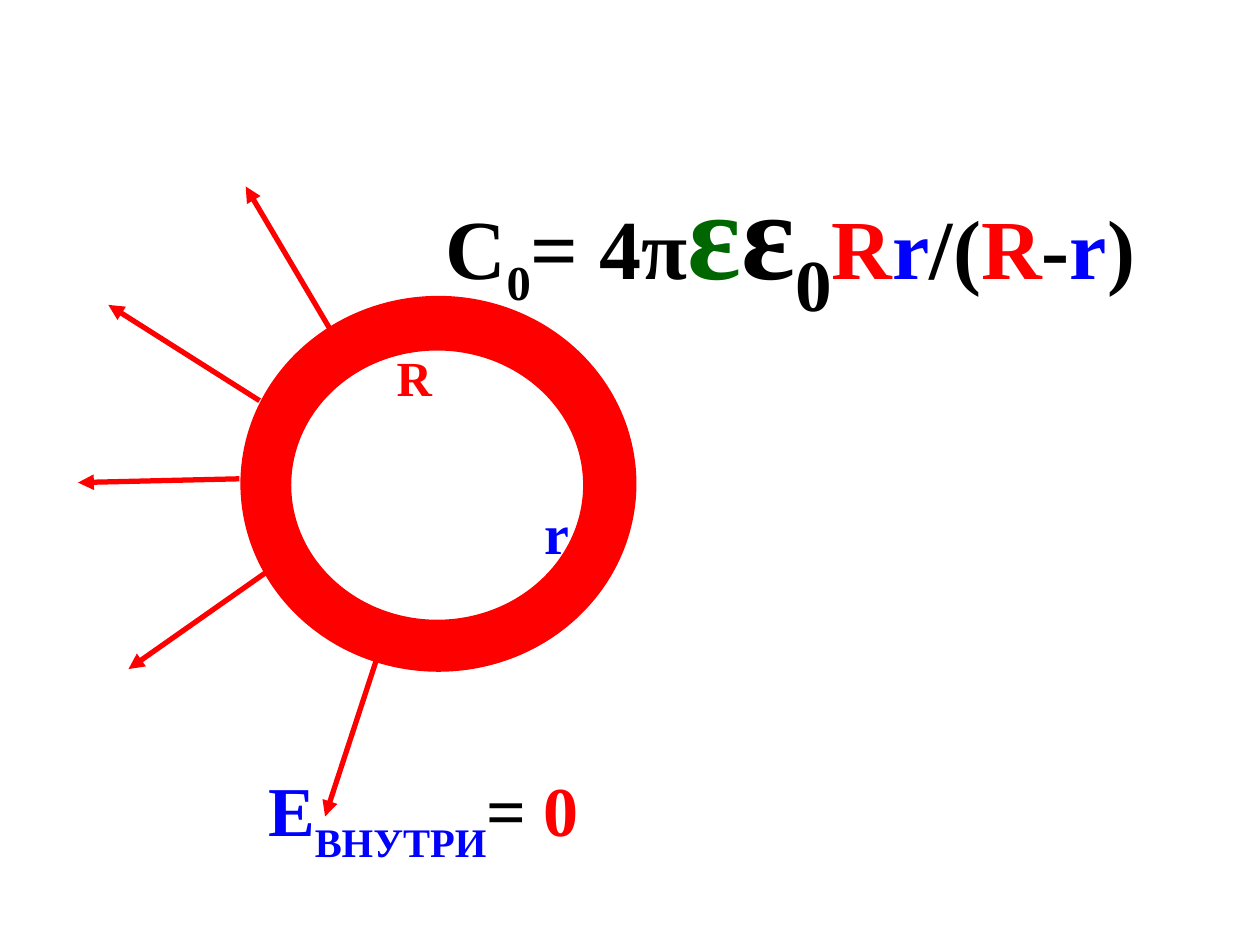
import lxml.etree
import pptx
import pptx.dml.color
import pptx.enum.shapes
import pptx.enum.text
import pptx.oxml.ns
import pptx.util

Inches = pptx.util.Inches
COLORS = {"red": "FF0000", "blue": "0000FF", "green": "006600",
          "black": "000000", "white": "FFFFFF"}


def color(name):
    """Return the named colour as an RGB value."""
    return pptx.dml.color.RGBColor.from_string(COLORS[name])


def add_field_lines(slide, lines):
    """Draw an arrow for each start and end point of the electric field."""
    for points in lines:
        connector = slide.shapes.add_connector(
            pptx.enum.shapes.MSO_CONNECTOR.STRAIGHT,
            *(Inches(value) for value in points))
        connector.line.color.rgb = color("red")
        connector.line.width = pptx.util.Pt(3)
        qualified_name = pptx.oxml.ns.qn
        lxml.etree.SubElement(connector.line._get_or_add_ln(),
                              qualified_name("a:tailEnd"), type="triangle")
        lxml.etree.SubElement(connector._element.spPr,
                              qualified_name("a:effectLst"))


def add_sphere(shapes, box, fill):
    """Draw one sphere outline of the capacitor in its box."""
    shape = shapes.add_shape(pptx.enum.shapes.MSO_SHAPE.OVAL,
                             *(Inches(value) for value in box))
    shape.shadow.inherit = False
    shape.fill.solid()
    shape.fill.fore_color.rgb = color(fill)
    shape.line.color.rgb = color("red")
    shape.line.width = pptx.util.Pt(6)


def add_capacitor(slide, outer_box, inner_box):
    """Group the outer and inner spheres of the capacitor."""
    group = slide.shapes.add_group_shape()
    add_sphere(group.shapes, outer_box, "red")
    add_sphere(group.shapes, inner_box, "white")


def add_formula(slide, box, parts, wrap=True, anchor="TOP"):
    """Write text, size, colour and baseline parts as one line in a box."""
    shape = slide.shapes.add_textbox(*(Inches(value) for value in box))
    frame_format = {
        "word_wrap": wrap,
        "auto_size": pptx.enum.text.MSO_AUTO_SIZE.SHAPE_TO_FIT_TEXT,
        "vertical_anchor": pptx.enum.text.MSO_ANCHOR[anchor],
    }
    for name, value in frame_format.items():
        setattr(shape.text_frame, name, value)
    paragraph = shape.text_frame.paragraphs[0]
    for text, size, color_name, baseline in parts:
        run = paragraph.add_run()
        run.text = text
        font_format = {"name": "Times New Roman", "bold": True,
                       "size": pptx.util.Pt(size)}
        for name, value in font_format.items():
            setattr(run.font, name, value)
        run.font.color.rgb = color(color_name)
        if baseline:
            run._r.get_or_add_rPr().set("baseline", str(baseline * 1000))


def main():
    """Build and save the spherical capacitor slide."""
    presentation = pptx.Presentation()
    presentation.slide_width = Inches(10)
    presentation.slide_height = Inches(7.5)
    slide = presentation.slides.add_slide(presentation.slide_layouts[6])

    add_field_lines(slide, [
        (2.63, 2.63, 1.95, 1.48),
        (2.06, 3.18, 0.86, 2.42),
        (1.9, 3.8, 0.62, 3.83),
        (2.13, 4.53, 1.02, 5.31),
        (2.99, 5.23, 2.58, 6.48),
    ])
    add_formula(slide, (2.03, 6.09, 3.2, 0.77), [
        ("E", 40, "blue", 0), ("ВНУТРИ", 40, "blue", -30),
        ("= ", 40, "black", 0), ("0", 40, "red", 0),
    ], anchor="MIDDLE")
    add_formula(slide, (3.44, 1.17, 5.82, 1.31), [
        ("С", 48, "black", 0), ("0", 48, "black", -25),
        ("= 4π", 48, "black", 0), ("ε", 72, "green", 0),
        ("ε", 72, "black", 0), ("0", 72, "black", -25),
        ("R", 48, "red", 0), ("r", 48, "blue", 0),
        ("/(", 48, "black", 0), ("R", 48, "red", 0),
        ("-", 48, "black", 0), ("r", 48, "blue", 0),
        (")", 48, "black", 0),
    ], wrap=False)
    add_capacitor(slide, (1.95, 2.39, 3.06, 2.9), (2.27, 2.74, 2.4, 2.22))
    add_formula(slide, (4.22, 3.91, 0.49, 0.64), [("r", 32, "blue", 0)])
    add_formula(slide, (3.05, 2.71, 0.49, 0.57), [("R", 28, "red", 0)],
                wrap=False)
    presentation.save("out.pptx")


if __name__ == "__main__":
    main()
